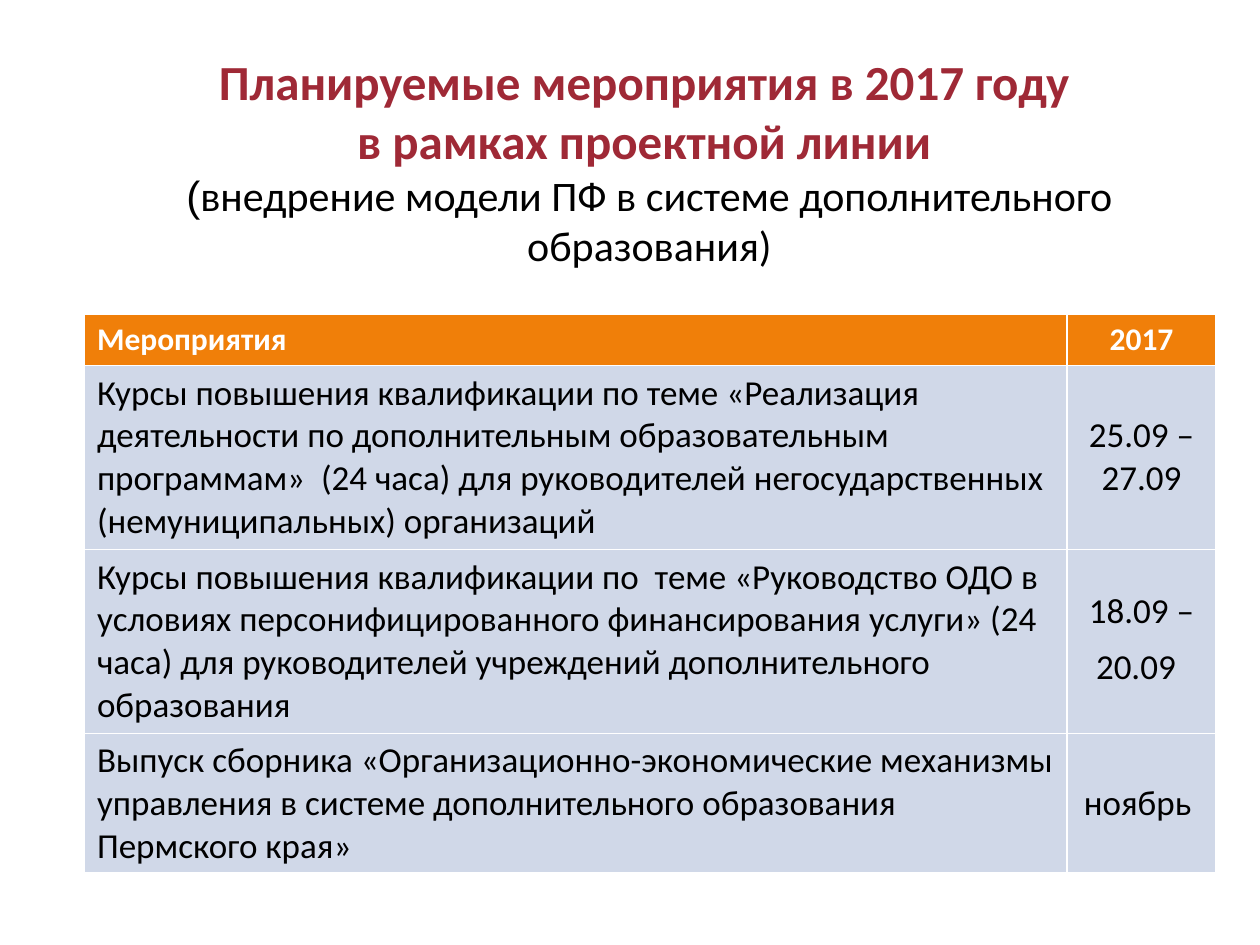
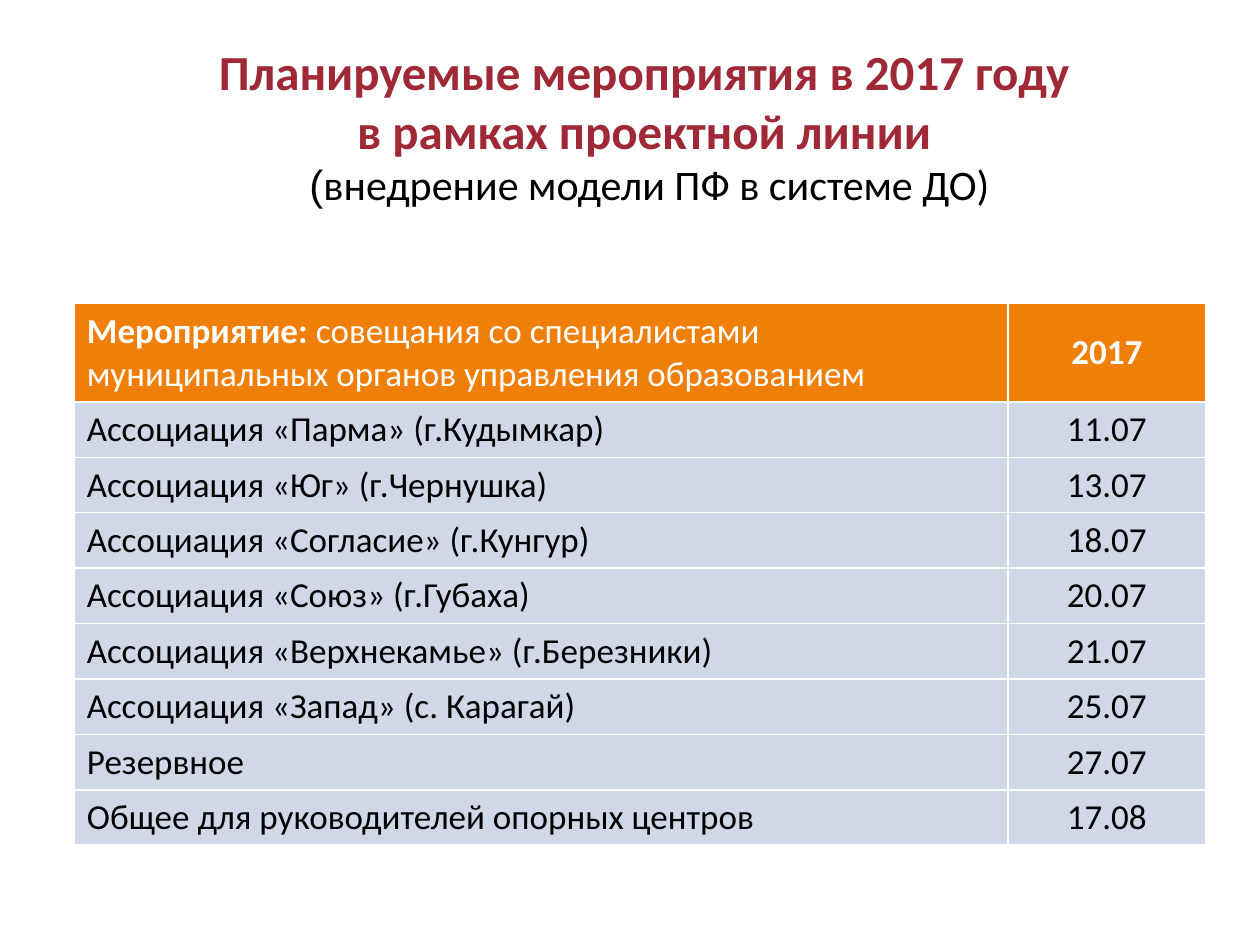
import pptx
import pptx.util
import pptx.dml.color
import pptx.enum.text

THEME = {
    "font": "Calibri", "bracket_font": "Arial",
    "title": "9F2936", "text": "000000", "on_header": "FFFFFF",
    "header": "F07F09", "body": "D0D8E8",
    "title_size": 28, "subtitle_size": 24, "body_size": 20,
}
SLIDE_W, SLIDE_H = 10, 7.5
TITLE_LEFT, TITLE_TOP, TITLE_W = 1.06, 0.21, 8.19
TABLE_W = 8.98
LEFT, CENTER = pptx.enum.text.PP_ALIGN.LEFT, pptx.enum.text.PP_ALIGN.CENTER
MIDDLE = pptx.enum.text.MSO_ANCHOR.MIDDLE

TITLE_LINES = ("Планируемые мероприятия в 2017 году ", "в рамках проектной линии ")

# A cell is a string or a list of (text, format) runs.
SLIDES = [
    {
        "subtitle": "внедрение модели ПФ в системе дополнительного образования)",
        "title_height": 2.13,
        "table_at": (0.67, 2.49),
        "date_width": 1.18,
        "header_size": 18,
        "row_heights": [0.41, 1.46, 1.46, 1.11],
        "rows": [
            ("Мероприятия", "2017"),
            ("Курсы повышения квалификации по теме «Реализация деятельности по "
             "дополнительным образовательным программам»  (24 часа) для руководителей "
             "негосударственных (немуниципальных) организаций", "25.09 – 27.09"),
            ("Курсы повышения квалификации по  теме «Руководство ОДО в условиях "
             "персонифицированного финансирования услуги» (24 часа) для руководителей "
             "учреждений дополнительного образования",
             [("18.09 – 20.09", {}), (" ", {"size": 28})]),
            ("Выпуск сборника «Организационно-экономические механизмы управления в "
             "системе дополнительного образования Пермского края»", "ноябрь "),
        ],
    },
    {
        "subtitle": "внедрение модели ПФ в системе ДО)",
        "title_height": 1.57,
        "table_at": (0.59, 2.41),
        "date_width": 1.57,
        "header_size": 20,
        "row_heights": [0.78] + [0.44] * 8,
        "rows": [
            ([("Мероприятие: ", {}),
              ("совещания со специалистами муниципальных органов управления образованием",
               {"bold": False})], "2017"),
            ("Ассоциация «Парма» (г.Кудымкар)", "11.07"),
            ("Ассоциация «Юг» (г.Чернушка)", "13.07"),
            ("Ассоциация «Согласие» (г.Кунгур)", "18.07"),
            ("Ассоциация «Союз» (г.Губаха)", "20.07"),
            ("Ассоциация «Верхнекамье» (г.Березники)", "21.07"),
            ("Ассоциация «Запад» (с. Карагай)", "25.07"),
            ("Резервное", "27.07"),
            ("Общее для руководителей опорных центров", "17.08"),
        ],
    },
]


def inches(*values):
    return [pptx.util.Inches(v) for v in values]


def rgb(name):
    return pptx.dml.color.RGBColor.from_string(THEME[name])


def add_text(p, text, font="font", size=THEME["body_size"], color="text", bold=False):
    r = p.add_run()
    r.text = text
    r.font.name = THEME[font]
    r.font.size = pptx.util.Pt(size)
    r.font.bold = bold
    r.font.color.rgb = rgb(color)


def add_title(s, subtitle, height):
    tf = s.shapes.add_textbox(*inches(TITLE_LEFT, TITLE_TOP, TITLE_W, height)).text_frame
    tf.word_wrap = True
    tf.vertical_anchor = MIDDLE
    p = tf.paragraphs[0]
    p.alignment = CENTER
    for line in TITLE_LINES:
        add_text(p, line, size=THEME["title_size"], color="title", bold=True)
        p.add_line_break()
    add_text(p, "(", font="bracket_font", size=THEME["subtitle_size"])
    add_text(p, subtitle, size=THEME["subtitle_size"])


def fill_cell(cell, content, is_header, is_date, header_size):
    cell.fill.solid()
    cell.fill.fore_color.rgb = rgb("header" if is_header else "body")
    p = cell.text_frame.paragraphs[0]
    p.alignment = CENTER if is_date else LEFT
    if is_date:
        cell.vertical_anchor = MIDDLE
    base = {"size": header_size, "color": "on_header", "bold": True} if is_header else {}
    runs = [(content, {})] if isinstance(content, str) else content
    for text, extra in runs:
        add_text(p, text, **{**base, **extra})


def add_schedule(s, data):
    heights, rows = data["row_heights"], data["rows"]
    widths = (TABLE_W - data["date_width"], data["date_width"])
    frame = s.shapes.add_table(len(rows), len(widths),
                               *inches(*data["table_at"], TABLE_W, sum(heights)))
    table = frame.table
    table.horz_banding = False
    for column, width in zip(table.columns, inches(*widths)):
        column.width = width
    for row, height in zip(table.rows, inches(*heights)):
        row.height = height
    for i, row in enumerate(rows):
        for j, content in enumerate(row):
            fill_cell(table.cell(i, j), content, i == 0, j == 1, data["header_size"])


def main():
    prs = pptx.Presentation()
    prs.slide_width, prs.slide_height = inches(SLIDE_W, SLIDE_H)
    for data in SLIDES:
        s = prs.slides.add_slide(prs.slide_layouts[6])
        add_title(s, data["subtitle"], data["title_height"])
        add_schedule(s, data)
    prs.save("out.pptx")


if __name__ == "__main__":
    main()
